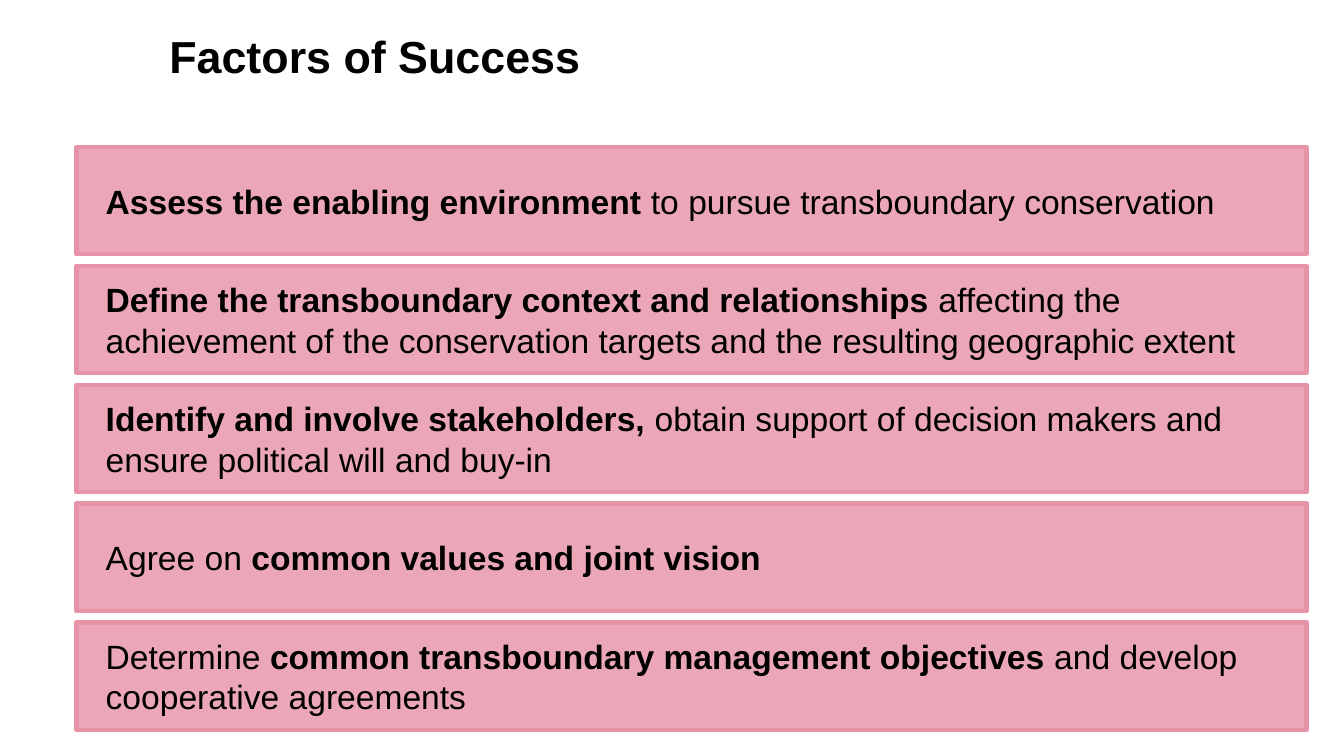
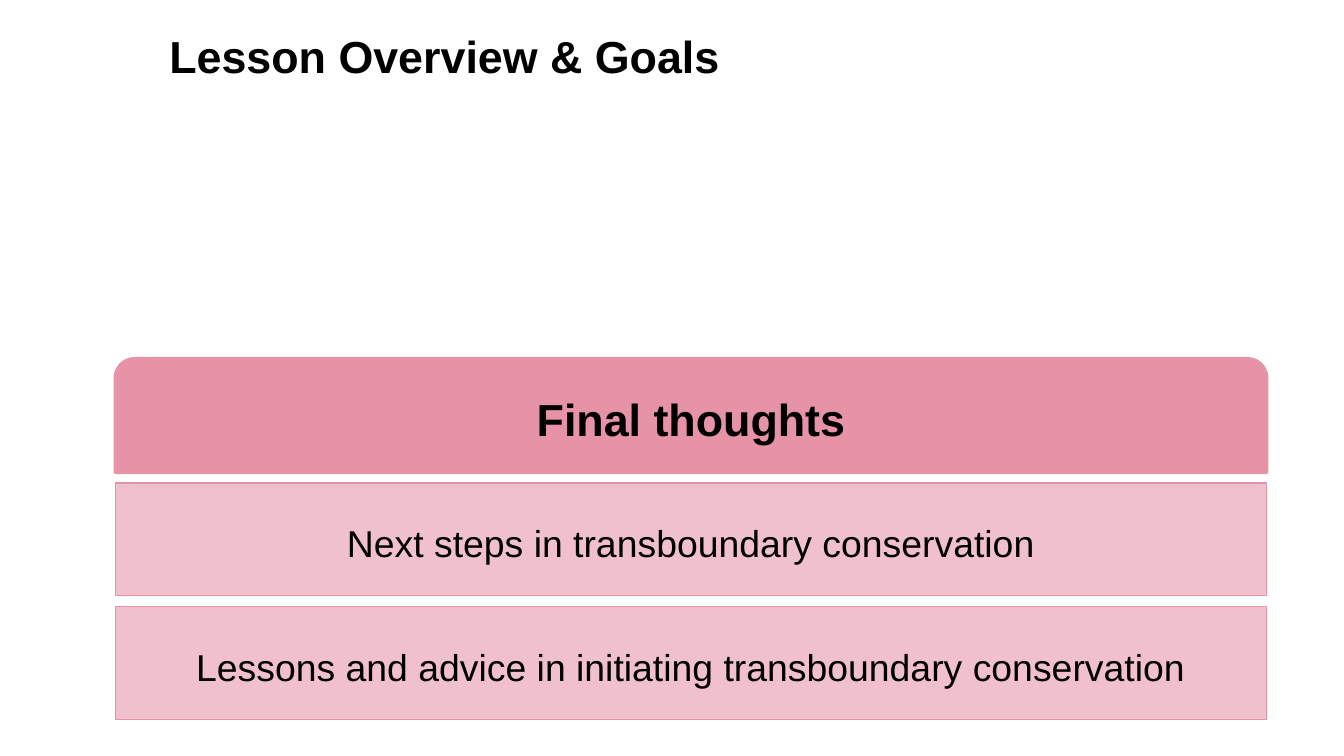
from lxml import etree
from pptx import Presentation
from pptx.dml.color import RGBColor
from pptx.enum.shapes import MSO_SHAPE
from pptx.enum.text import MSO_ANCHOR, MSO_AUTO_SIZE, PP_ALIGN
from pptx.oxml.ns import qn
from pptx.util import Pt

RECTANGLE = MSO_SHAPE.RECTANGLE
ROUNDED_TOP = MSO_SHAPE.ROUND_2_SAME_RECTANGLE
TOP, MIDDLE = MSO_ANCHOR.TOP, MSO_ANCHOR.MIDDLE
LEFT, CENTER = PP_ALIGN.LEFT, PP_ALIGN.CENTER

FONT = "Arial"
COLORS = {"rose": "E692A7", "text": "000000", "title_band": "FFFFFF"}
TITLE_ONLY = 5

# Each text is a list of (words, bold) pieces.
FACTORS_TITLE = "Factors of Success"
FACTORS = [
    [("Assess the enabling environment ", True),
     ("to pursue transboundary conservation", False)],
    [("Define the transboundary context and relationships ", True),
     ("affecting the achievement of the conservation targets and the "
      "resulting geographic extent", False)],
    [("Identify and involve stakeholders, ", True),
     ("obtain support of decision makers and ensure political will and "
      "buy-in", False)],
    [("Agree on ", False), ("common values and joint vision", True)],
    [("Determine", False),
     (" common transboundary management objectives ", True),
     ("and develop cooperative agreements", False)],
]

OVERVIEW_TITLE = "Lesson Overview & Goals"
OVERVIEW_HEADING = [("Final thoughts", True)]
OVERVIEW_TOPICS = [
    [("Next steps in transboundary conservation", False)],
    [("Lessons and advice in initiating transboundary conservation", False)],
]

# left, top, width, height and distance from one top to the next, in points
FACTOR_STACK = (41, 78.7, 659, 57.6, 63.7)
OVERVIEW_STACK = (62, 192.4, 616.4, 60.5, 66.3)


def set_fill(shape, color, opacity=100):
    shape.fill.solid()
    shape.fill.fore_color.rgb = RGBColor.from_string(COLORS[color])
    if opacity < 100:
        value = shape.fill._xPr.find(qn("a:solidFill"))[0]
        etree.SubElement(value, qn("a:alpha"), val=str(opacity * 1000))


def write(paragraph, pieces, size):
    for words, bold in pieces:
        run = paragraph.add_run()
        run.text = words
        run.font.name = FONT
        run.font.size = Pt(size)
        run.font.bold = bold
        run.font.color.rgb = RGBColor.from_string(COLORS["text"])


def add_titled_slide(prs, words):
    slide = prs.slides.add_slide(prs.slide_layouts[TITLE_ONLY])
    title = slide.shapes.title
    title.left, title.top = Pt(83.5), Pt(9.4)
    title.width, title.height = Pt(636.5), Pt(46)
    set_fill(title, "title_band", 55)
    frame = title.text_frame
    frame.auto_size = MSO_AUTO_SIZE.NONE
    frame.vertical_anchor = TOP
    frame.margin_top = Pt(6)
    paragraph = frame.paragraphs[0]
    paragraph.alignment = LEFT
    write(paragraph, [(words, True)], 24)
    return slide


def add_bar(slide, stack, row, pieces, size, opacity, border,
            kind=RECTANGLE, align=CENTER):
    """Add the bar at the given row of a stack and return its paragraph."""
    left, top, width, height, pitch = stack
    bar = slide.shapes.add_shape(kind, Pt(left), Pt(top + row * pitch),
                                 Pt(width), Pt(height))
    bar.shadow.inherit = False
    set_fill(bar, "rose", opacity)
    bar.line.color.rgb = RGBColor.from_string(COLORS["rose"])
    bar.line.width = Pt(border)
    frame = bar.text_frame
    frame.word_wrap = True
    frame.vertical_anchor = MIDDLE
    frame.margin_left = frame.margin_right = Pt(7.2)
    frame.margin_top = frame.margin_bottom = Pt(7.2)
    paragraph = frame.paragraphs[0]
    paragraph.alignment = align
    write(paragraph, pieces, size)
    return paragraph


def build_factors(prs):
    slide = add_titled_slide(prs, FACTORS_TITLE)
    for row, factor in enumerate(FACTORS):
        paragraph = add_bar(slide, FACTOR_STACK, row, factor, 18, 80, 2.25,
                            align=LEFT)
        paragraph.space_after = Pt(6)
        paragraph._p.get_or_add_pPr().set("marL", str(Pt(8.6)))


def build_overview(prs):
    slide = add_titled_slide(prs, OVERVIEW_TITLE)
    add_bar(slide, OVERVIEW_STACK, 0, OVERVIEW_HEADING, 24, 100, 2.25,
            kind=ROUNDED_TOP)
    for row, topic in enumerate(OVERVIEW_TOPICS, start=1):
        paragraph = add_bar(slide, OVERVIEW_STACK, row, topic, 20, 57, 0.75)
        paragraph.line_spacing = 1.15


def main():
    prs = Presentation()
    prs.slide_width, prs.slide_height = Pt(720), Pt(405)
    build_factors(prs)
    build_overview(prs)
    prs.save("out.pptx")


if __name__ == "__main__":
    main()
